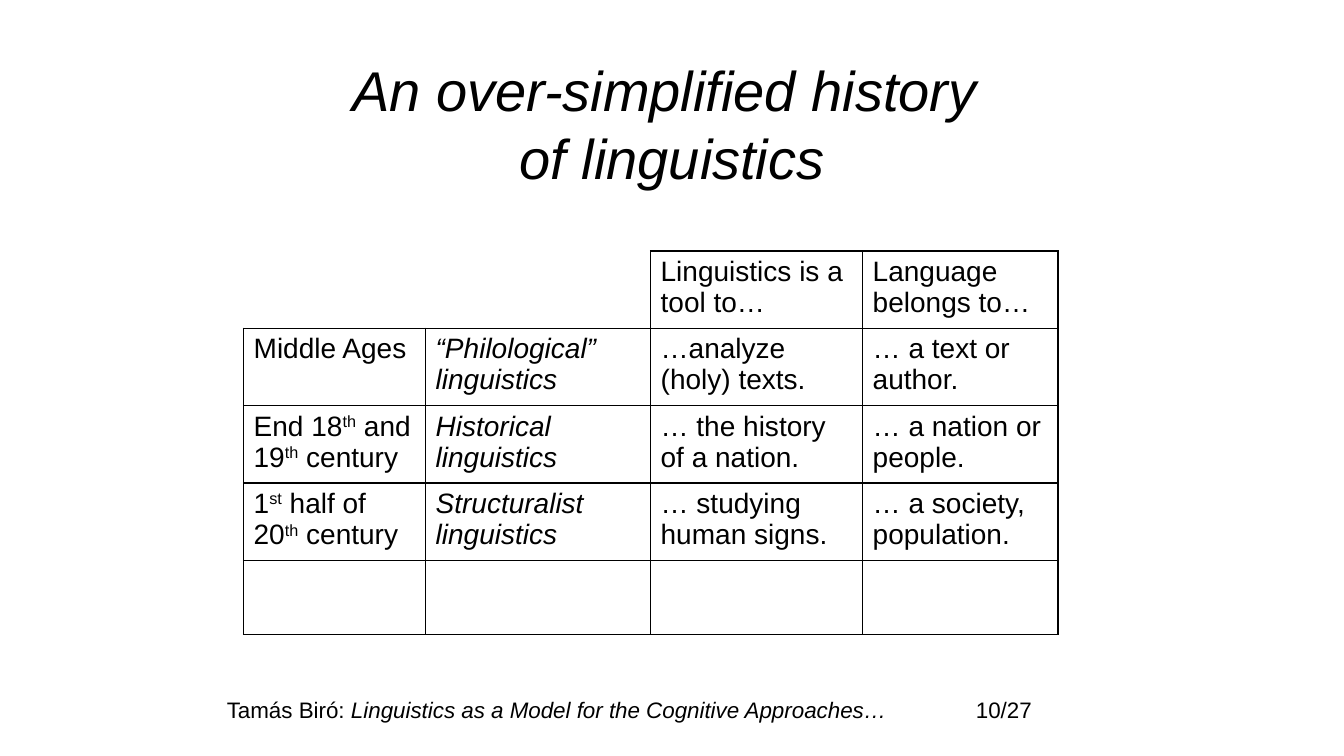
from dataclasses import dataclass

from lxml.etree import SubElement
from pptx import Presentation
from pptx.dml.color import RGBColor
from pptx.enum.text import MSO_ANCHOR, PP_ALIGN
from pptx.oxml.ns import qn
from pptx.util import Pt


@dataclass(frozen=True)
class Theme:
    font: str = "Arial"
    ink: str = "000000"
    title_size: int = 40
    table_size: int = 20
    footer_size: int = 16
    border_width: int = 1


theme = Theme()


def add_runs(paragraph, text, size, italic=False):
    """Write text as runs; parts between ^ marks are superscript."""
    for index, part in enumerate(text.split("^")):
        run = paragraph.add_run()
        run.text = part
        formats = {"name": theme.font, "size": Pt(size), "italic": italic}
        for name, value in formats.items():
            setattr(run.font, name, value)
        run.font.color.rgb = RGBColor.from_string(theme.ink)
        if index % 2:
            run.font._element.set("baseline", "30000")


def add_text(left, top, width, height, alignment):
    """Add a text box without margins and return its first paragraph."""
    box = slide.shapes.add_textbox(Pt(left), Pt(top), Pt(width), Pt(height))
    frame = box.text_frame
    formats = {"margin_left": 0, "margin_right": 0, "margin_top": 0, "margin_bottom": 0,
               "word_wrap": True, "vertical_anchor": MSO_ANCHOR.TOP}
    for name, value in formats.items():
        setattr(frame, name, value)
    paragraph = frame.paragraphs[0]
    paragraph.alignment = alignment
    return paragraph


presentation = Presentation()
presentation.slide_width = Pt(960)
presentation.slide_height = Pt(540)
slide = presentation.slides.add_slide(presentation.slide_layouts[6])

# Footer
footer = add_text(162, 497.5, 505, 24, PP_ALIGN.LEFT)
add_runs(footer, "Tamás Biró: ", theme.footer_size)
add_runs(footer, "Linguistics as a Model for the Cognitive Approaches…", theme.footer_size, italic=True)
page_number = add_text(678, 497.5, 59, 24, PP_ALIGN.RIGHT)
add_runs(page_number, "10/27", theme.footer_size)

# Table of periods
rows = [
    ["", "", "Linguistics is a tool to…", "Language belongs to…"],
    ["Middle Ages", "“Philological” linguistics", "…analyze (holy) texts.", "… a text or author."],
    ["End 18^th^ and 19^th^ century", "Historical linguistics", "… the history of a nation.",
     "… a nation or people."],
    ["1^st^ half of 20^th^ century", "Structuralist linguistics", "… studying human signs.",
     "… a society, population."],
    ["", "", "", ""],
]
column_widths = [130, 160.75, 151.5, 139.5]
row_height = 52.75
open_sides = {(0, 0): "LRT", (0, 1): "LT"}

table = slide.shapes.add_table(
    len(rows), len(column_widths), Pt(174), Pt(179.25),
    Pt(sum(column_widths)), Pt(row_height * len(rows)),
).table
table.first_row = False
table.horz_banding = False
for column, width in zip(table.columns, column_widths):
    column.width = Pt(width)

for row_index, texts in enumerate(rows):
    table.rows[row_index].height = Pt(row_height)
    for column_index, text in enumerate(texts):
        cell = table.cell(row_index, column_index)
        properties = cell._tc.get_or_add_tcPr()
        for side in "LRTB":
            line = SubElement(properties, qn(f"a:ln{side}"), w=str(Pt(theme.border_width)))
            if side in open_sides.get((row_index, column_index), ""):
                SubElement(line, qn("a:noFill"))
            else:
                fill = SubElement(line, qn("a:solidFill"))
                SubElement(fill, qn("a:srgbClr"), val=theme.ink)
        cell.fill.background()
        if text:
            paragraph = cell.text_frame.paragraphs[0]
            paragraph.space_before = Pt(7)
            add_runs(paragraph, text, theme.table_size, italic=column_index == 1)

# Title
title = add_text(174, 40, 612, 122, PP_ALIGN.CENTER)
add_runs(title, "An over-simplified history ", theme.title_size, italic=True)
title.add_line_break()
add_runs(title, "of linguistics", theme.title_size, italic=True)

presentation.save("out.pptx")
